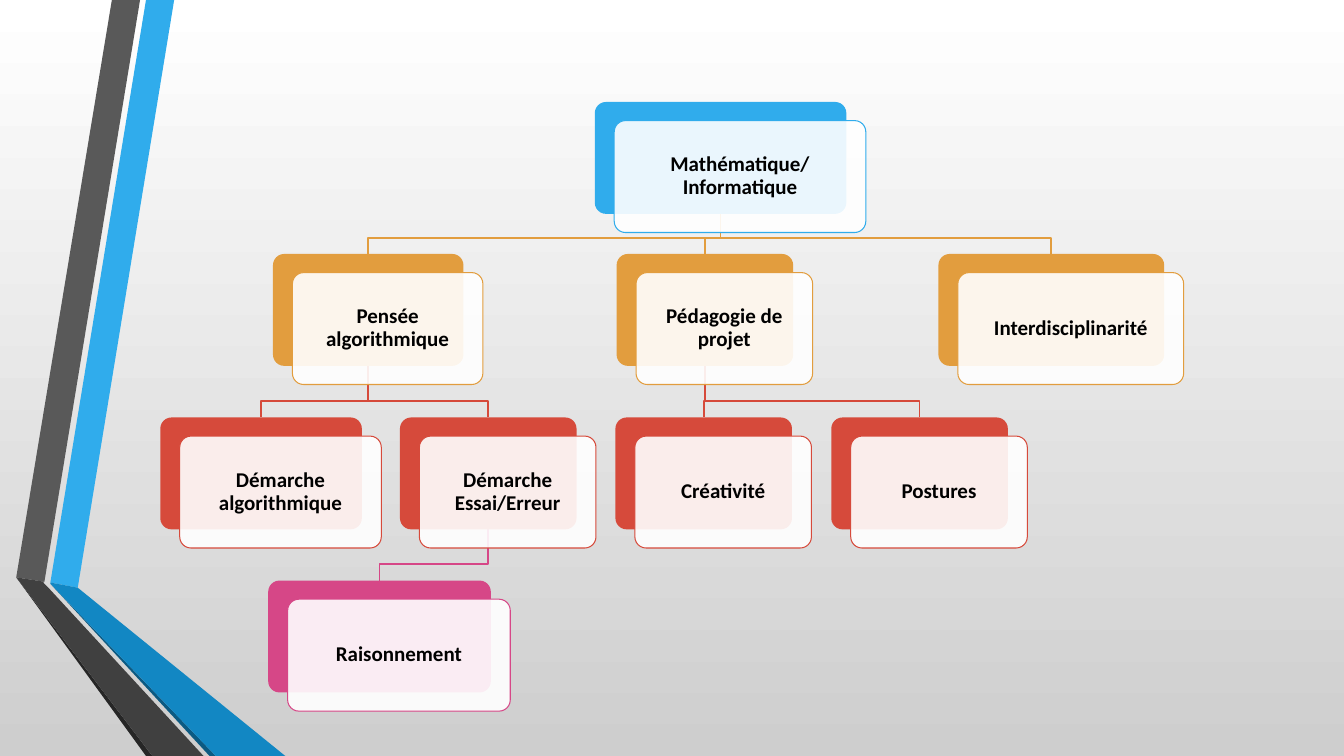
"""Build a concept tree linking mathematics and computing."""
from dataclasses import dataclass

from lxml.etree import SubElement
from pptx import Presentation
from pptx.dml.color import RGBColor
from pptx.enum.shapes import MSO_SHAPE
from pptx.enum.text import MSO_ANCHOR, PP_ALIGN
from pptx.oxml.ns import qn
from pptx.util import Cm, Pt


@dataclass(frozen=True)
class Theme:
    """Colours, font and type sizes of the slide."""
    sky: str = "30ACEC"
    ocean: str = "1287C3"
    navy: str = "0C5A82"
    grey: str = "595959"
    charcoal: str = "404040"
    coal: str = "262626"
    white: str = "FFFFFF"
    silver: str = "CECECE"
    ink: str = "000000"
    levels: tuple = ("30ACEC", "E29D3E", "D64A3B", "D64787")
    font: str = "Calibri"
    label_size: float = 15
    branch_weight: float = 1.25
    border_weight: float = 0.75


@dataclass(frozen=True)
class Concept:
    """A labelled card of the tree, with its left edge and width in cm."""
    label: str
    left: float
    width: float
    children: tuple = ()

    @property
    def centre(self):
        """Return the horizontal middle of the back card."""
        return self.left + self.width / 2


THEME = Theme()
LEVEL_TOPS = (2.57, 6.4, 10.52, 14.63)
CARD_HEIGHT = 2.82
CARD_SHIFT = (0.49, 0.47)
BRANCH_DROP = 0.41
SLIDE_WIDTH, SLIDE_HEIGHT = 33.87, 19.05

TREE = Concept("Mathématique/\nInformatique", 14.99, 6.34, (
    Concept("Pensée algorithmique", 6.88, 4.8, (
        Concept("Démarche algorithmique", 4.04, 5.08),
        Concept("Démarche Essai/Erreur", 10.08, 4.45, (
            Concept("Raisonnement", 6.76, 5.61),
        )),
    )),
    Concept("Pédagogie de projet", 15.54, 4.45, (
        Concept("Créativité", 15.51, 4.45),
        Concept("Postures", 20.95, 4.45),
    )),
    Concept("Interdisciplinarité", 23.65, 5.69),
))

RIBBONS = (
    (THEME.sky, ((1.27, 14.68), (1.96, 14.81), (4.39, 0), (3.68, 0))),
    (THEME.grey, ((3.53, 0), (2.82, 0), (0.41, 14.55), (1.12, 14.66))),
    (THEME.coal, ((0.41, 14.55), (3.68, SLIDE_HEIGHT), (3.84, SLIDE_HEIGHT))),
    (THEME.navy, ((1.27, 14.71), (5.28, SLIDE_HEIGHT), (5.44, SLIDE_HEIGHT))),
    (THEME.ocean, ((1.27, 14.68), (1.27, 14.71), (5.44, SLIDE_HEIGHT),
                   (7.19, SLIDE_HEIGHT), (1.96, 14.81))),
    (THEME.charcoal, ((5.13, SLIDE_HEIGHT), (1.22, 14.81), (1.09, 14.68),
                      (1.12, 14.66), (0.41, 14.55), (3.84, SLIDE_HEIGHT))),
)


def style(shape, fill=None, line=None, weight=0, opacity=100):
    """Set the fill, outline and opacity of a shape, without shadow."""
    shape.shadow.inherit = False
    if fill:
        shape.fill.solid()
        shape.fill.fore_color.rgb = RGBColor.from_string(fill)
        if opacity < 100:
            colour = shape.element.spPr.find(qn("a:solidFill"))[0]
            SubElement(colour, qn("a:alpha"), val=str(opacity * 1000))
    else:
        shape.fill.background()
    if line:
        shape.line.color.rgb = RGBColor.from_string(line)
        shape.line.width = Pt(weight)
    else:
        shape.line.fill.background()


def write(shape, text, size=THEME.label_size, color=THEME.ink, bold=True,
          align=PP_ALIGN.CENTER, spacing=0.9, inset=0.24):
    """Write one formatted paragraph into a shape."""
    frame = shape.text_frame
    frame.word_wrap = True
    frame.vertical_anchor = MSO_ANCHOR.MIDDLE
    frame.margin_left = frame.margin_right = Cm(inset)
    frame.margin_top = frame.margin_bottom = Cm(inset)
    paragraph = frame.paragraphs[0]
    paragraph.text = text
    paragraph.alignment = align
    paragraph.line_spacing = spacing
    for run in paragraph.runs:
        run.font.name = THEME.font
        run.font.size = Pt(size)
        run.font.bold = bold
        run.font.color.rgb = RGBColor.from_string(color)


def add_outline(slide, points, close, **look):
    """Draw a polygon or an open path through points in cm."""
    start, *rest = [(Cm(x), Cm(y)) for x, y in points]
    builder = slide.shapes.build_freeform(*start)
    builder.add_line_segments(rest, close=close)
    style(builder.convert_to_shape(), **look)


def add_card(slide, left, top, width, **look):
    """Add one rounded card and return it."""
    card = slide.shapes.add_shape(MSO_SHAPE.ROUNDED_RECTANGLE, Cm(left),
                                  Cm(top), Cm(width), Cm(CARD_HEIGHT))
    card.adjustments[0] = 0.1
    style(card, **look)
    return card


def add_branches(slide, concept, level=0):
    """Draw the bent lines from a concept down to all its descendants."""
    for child in concept.children:
        bottom = LEVEL_TOPS[level] + CARD_HEIGHT
        child_top = LEVEL_TOPS[level + 1]
        bend = child_top - BRANCH_DROP
        bends = ((concept.centre, bottom), (concept.centre, bend),
                 (child.centre, bend), (child.centre, child_top))
        add_outline(slide, bends, close=False,
                    line=THEME.levels[level + 1], weight=THEME.branch_weight)
        add_branches(slide, child, level + 1)


def add_concepts(slide, concept, level=0):
    """Draw the paired cards of a concept and of its descendants."""
    color, top = THEME.levels[level], LEVEL_TOPS[level]
    shift_x, shift_y = CARD_SHIFT
    add_card(slide, concept.left, top, concept.width, fill=color)
    front = add_card(slide, concept.left + shift_x, top + shift_y,
                     concept.width, fill=THEME.white, opacity=90,
                     line=color, weight=THEME.border_weight)
    write(front, concept.label)
    for child in concept.children:
        add_concepts(slide, child, level + 1)


def paint_background(slide):
    """Shade the background from white at the top to silver."""
    fill = slide.background.fill
    fill.gradient()
    fill.gradient_angle = 270
    for stop, color in zip(fill.gradient_stops, (THEME.white, THEME.silver)):
        stop.color.rgb = RGBColor.from_string(color)


def main():
    """Build and save the slide."""
    deck = Presentation()
    deck.slide_width, deck.slide_height = Cm(SLIDE_WIDTH), Cm(SLIDE_HEIGHT)
    slide = deck.slides.add_slide(deck.slide_layouts.get_by_name("Blank"))
    paint_background(slide)
    for color, corners in RIBBONS:
        add_outline(slide, corners, close=True, fill=color)
    add_branches(slide, TREE)
    add_concepts(slide, TREE)
    deck.save("out.pptx")


if __name__ == "__main__":
    main()
